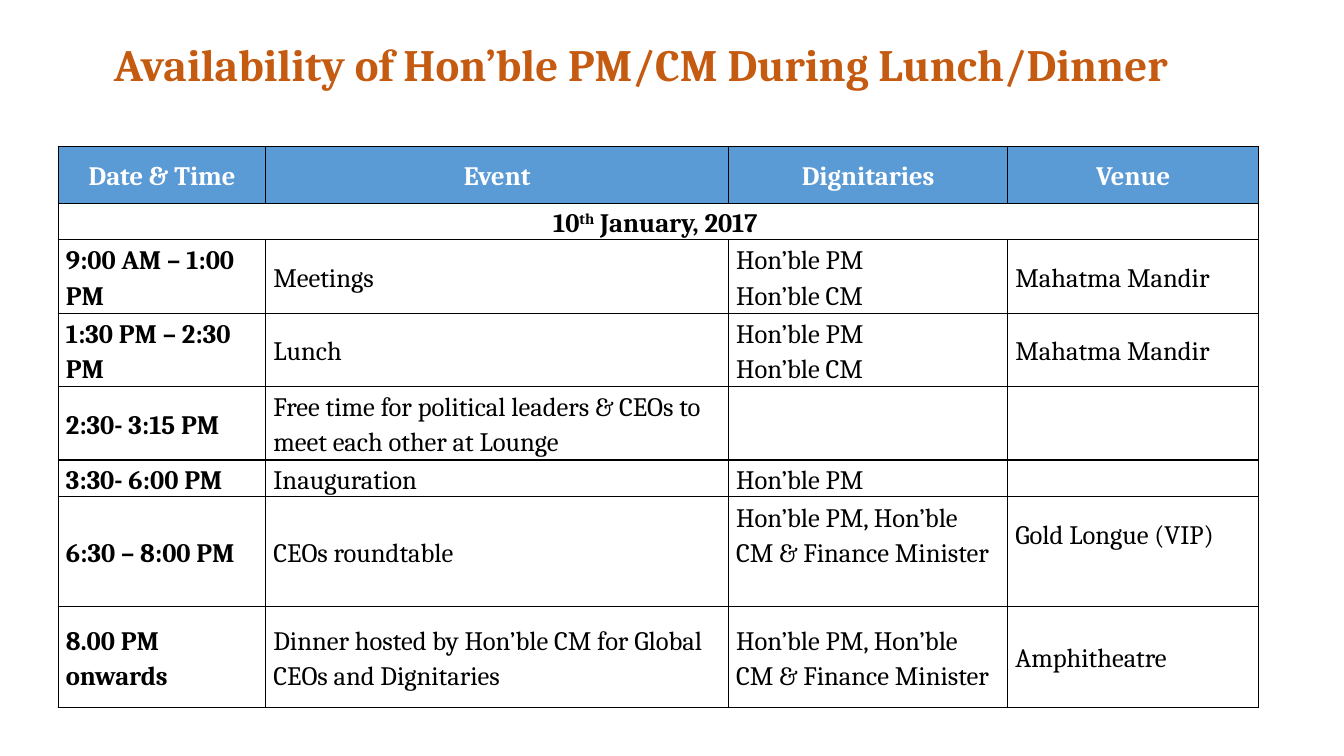
from dataclasses import dataclass

from lxml import etree
from pptx import Presentation
from pptx import util as u
from pptx.dml.color import RGBColor
from pptx.enum import text
from pptx.oxml import ns


@dataclass(frozen=True)
class Theme:
    font: str = "Cambria"
    title_color: str = "C55A11"
    header_fill: str = "5B9BD5"
    header_text: str = "FFFFFF"
    body_fill: str = "FFFFFF"
    body_text: str = "000000"
    border: str = "000000"
    title_size: int = 32
    table_size: int = 19
    border_width: int = 1


class SlideBuilder:
    def __init__(self, slide, theme):
        self.slide = slide
        self.theme = theme

    def style(self, paragraph, size, color, bold):
        font = paragraph.font
        font.name = self.theme.font
        font.size = u.Pt(size)
        font.bold = bold
        font.color.rgb = RGBColor.from_string(color)

    def title(self, words, left, top, width, height):
        box = self.slide.shapes.add_textbox(*map(u.Cm, (left, top, width, height)))
        frame = box.text_frame
        frame.word_wrap = True
        frame.vertical_anchor = text.MSO_ANCHOR.MIDDLE
        paragraph = frame.paragraphs[0]
        paragraph.text = words
        paragraph.line_spacing = 0.9
        self.style(paragraph, self.theme.title_size, self.theme.title_color, True)

    def table(self, left, top, widths, heights):
        frame = self.slide.shapes.add_table(
            len(heights), len(widths), u.Cm(left), u.Cm(top),
            u.Cm(sum(widths)), u.Cm(sum(heights)))
        table = frame.table
        table.first_row = table.horz_banding = False
        for column, width in zip(table.columns, widths):
            column.width = u.Cm(width)
        for row, height in zip(table.rows, heights):
            row.height = u.Cm(height)
        return table

    def borders(self, cell):
        properties = cell._tc.get_or_add_tcPr()
        for index, side in enumerate(("lnL", "lnR", "lnT", "lnB")):
            line = etree.Element(ns.qn(f"a:{side}"), w=str(u.Pt(self.theme.border_width)))
            fill = etree.SubElement(line, ns.qn("a:solidFill"))
            etree.SubElement(fill, ns.qn("a:srgbClr"), val=self.theme.border)
            properties.insert(index, line)

    def cell(self, cell, words, header=False, bold=False, centered=False, right=0.19, bottom=0):
        theme = self.theme
        cell.fill.solid()
        cell.fill.fore_color.rgb = RGBColor.from_string(
            theme.header_fill if header else theme.body_fill)
        self.borders(cell)
        cell.vertical_anchor = text.MSO_ANCHOR.MIDDLE
        cell.margin_left = u.Cm(0.19)
        cell.margin_right = u.Cm(right)
        cell.margin_top = 0
        cell.margin_bottom = u.Cm(bottom)
        paragraph = cell.text_frame.paragraphs[0]
        for number, line in enumerate(words.split("\n")):
            if number:
                paragraph.add_line_break()
            # Every second part between carets is superscript
            for index, part in enumerate(line.split("^")):
                if part:
                    run = paragraph.add_run()
                    run.text = part
                    if index % 2:
                        run._r.get_or_add_rPr().set("baseline", "30000")
        paragraph.line_spacing = 1.15
        paragraph.alignment = text.PP_ALIGN.CENTER if centered else text.PP_ALIGN.LEFT
        self.style(paragraph, theme.table_size,
                   theme.header_text if header else theme.body_text, bold)


HEADINGS = ("Date & Time", "Event", "Dignitaries", "Venue")
DAY = "10^th^ January, 2017"
BOTH = "Hon’ble PM\nHon’ble CM"
WITH_MINISTER = "Hon’ble PM, Hon’ble CM & Finance Minister"
PROGRAMME = (
    ("9:00 AM – 1:00 PM", "Meetings", BOTH, "Mahatma Mandir"),
    ("1:30 PM – 2:30 PM", "Lunch", BOTH, "Mahatma Mandir"),
    ("2:30- 3:15 PM",
     "Free time for political leaders & CEOs to meet each other at Lounge", "", ""),
    ("3:30- 6:00 PM", "Inauguration", "Hon’ble PM", ""),
    ("6:30 – 8:00 PM", "CEOs roundtable", WITH_MINISTER, "Gold Longue (VIP)"),
    ("8.00 PM onwards", "Dinner hosted by Hon’ble CM for Global CEOs and Dignitaries",
     WITH_MINISTER, "Amphitheatre"),
)
WIDTHS = (5.23, 11.66, 7.04, 6.32)
HEIGHTS = (1.42, 0.87, 1.77, 1.77, 1.77, 0.89, 2.77, 2.54)


def main():
    presentation = Presentation()
    presentation.slide_width = u.Cm(33.87)
    presentation.slide_height = u.Cm(19.05)
    slide = presentation.slides.add_slide(presentation.slide_layouts[6])
    builder = SlideBuilder(slide, Theme())

    # Title
    builder.title("Availability of Hon’ble PM/CM During Lunch/Dinner",
                  2.62, 0.95, 27.79, 1.5)

    # Table header
    table = builder.table(1.47, 3.7, WIDTHS, HEIGHTS)
    for column, heading in enumerate(HEADINGS):
        builder.cell(table.cell(0, column), heading, header=True, bold=True, centered=True)

    # Day across all columns
    for column in range(len(HEADINGS)):
        builder.cell(table.cell(1, column), "" if column else DAY,
                     bold=True, centered=True, right=0.35)
    table.cell(1, 0).merge(table.cell(1, len(HEADINGS) - 1))

    # Programme rows; the roundtable guests and venue sit half a line higher
    for row, entries in enumerate(PROGRAMME, start=2):
        for column, words in enumerate(entries):
            raised = entries[1] == "CEOs roundtable" and column >= 2
            builder.cell(table.cell(row, column), words, bold=column == 0,
                         bottom=0.89 if raised else 0)

    presentation.save("out.pptx")


if __name__ == "__main__":
    main()
